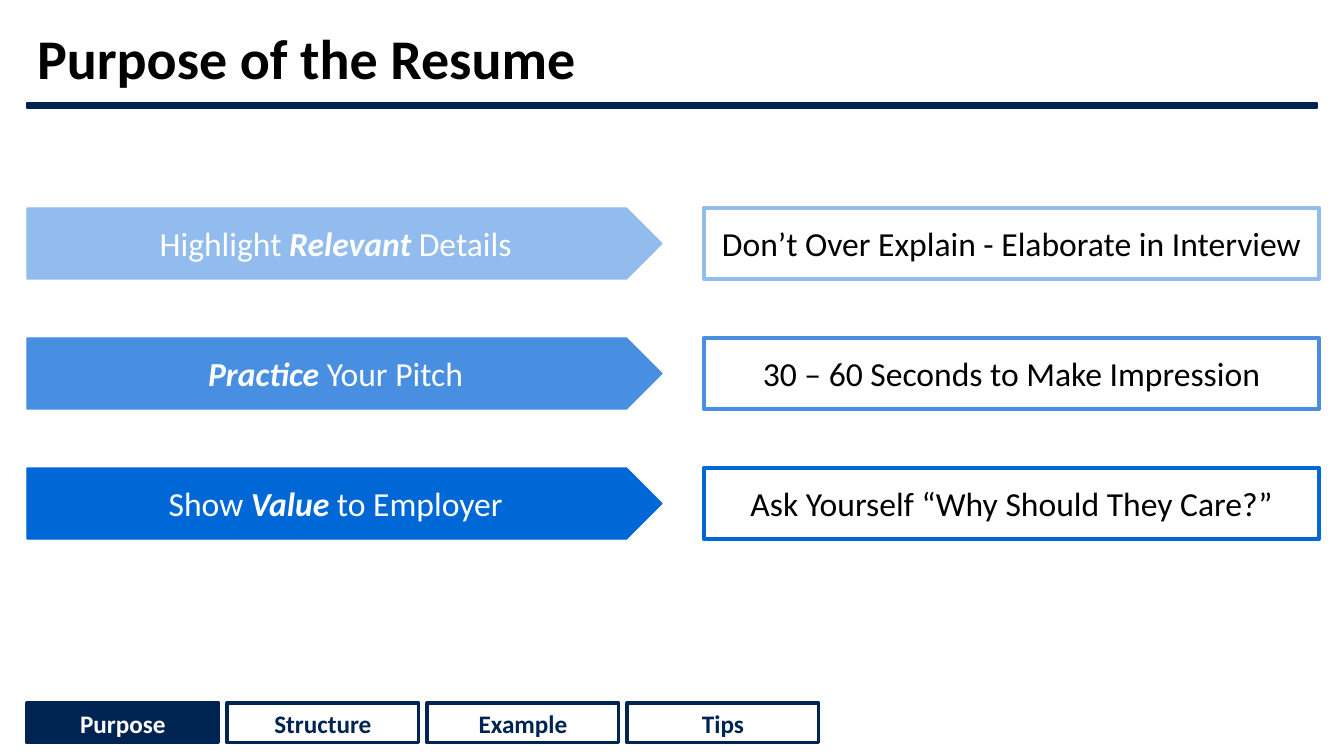
from pptx import Presentation
from pptx.dml.color import RGBColor
from pptx.enum.shapes import MSO_SHAPE as Shape
from pptx.enum.text import MSO_ANCHOR as Anchor, PP_ALIGN as Align
from pptx.util import Pt

COLORS = {
    "navy": "002452", "light": "91BCED", "medium": "488EE1",
    "strong": "0068D6", "white": "FFFFFF", "black": "000000",
}
TITLE = "Purpose of the Resume"
# Colour, arrow text as (words, emphasized) runs, box text
PURPOSES = [
    ("light", [("Highlight ", False), ("Relevant", True), (" Details", False)],
     "Don’t Over Explain - Elaborate in Interview"),
    ("medium", [("Practice", True), (" Your Pitch", False)],
     "30 – 60 Seconds to Make Impression"),
    ("strong", [("Show ", False), ("Value", True), (" to Employer", False)],
     "Ask Yourself “Why Should They Care?”"),
]
TABS = ["Purpose", "Structure", "Example", "Tips"]
CURRENT_TAB = "Purpose"

PX = 914400 / 100.8
SLIDE_WIDTH, SLIDE_HEIGHT = 1344, 756
LEFT, CONTENT_WIDTH = 27, 1290
TITLE_TOP, TITLE_HEIGHT, RULE_HEIGHT = 19, 84, 5
ROW_TOP, ROW_STEP, ROW_HEIGHT = 208, 130, 71
ARROW_WIDTH, BOX_LEFT, BOX_WIDTH = 635, 704, 615
TAB_TOP, TAB_STEP, TAB_WIDTH, TAB_HEIGHT = 703, 200, 192, 40


def px(length):
    return round(length * PX)


def rgb(name):
    return RGBColor.from_string(COLORS[name])


def format_font(font, color, **values):
    font.name = "Calibri"
    font.color.rgb = rgb(color)
    for name, value in values.items():
        setattr(font, name, value)


def add_panel(kind, area, fill, line, line_width, runs=(), color="black", **font):
    """Add a filled, outlined shape with centred (words, font values) runs."""
    shape = slide.shapes.add_shape(kind, *map(px, area))
    shape.shadow.inherit = False
    shape.fill.solid()
    shape.fill.fore_color.rgb = rgb(fill)
    shape.line.color.rgb = rgb(line)
    shape.line.width = Pt(line_width)
    shape.text_frame.vertical_anchor = Anchor.MIDDLE
    paragraph = shape.text_frame.paragraphs[0]
    paragraph.alignment = Align.CENTER
    for words, values in runs:
        run = paragraph.add_run()
        run.text = words
        format_font(run.font, color, **font, **values)


presentation = Presentation()
presentation.slide_width = px(SLIDE_WIDTH)
presentation.slide_height = px(SLIDE_HEIGHT)
slide = presentation.slides.add_slide(presentation.slide_layouts[5])

title = slide.shapes.title
title.left, title.top = px(LEFT), px(TITLE_TOP)
title.width, title.height = px(CONTENT_WIDTH), px(TITLE_HEIGHT)
title.text_frame.text = TITLE
title.text_frame.vertical_anchor = Anchor.MIDDLE
heading = title.text_frame.paragraphs[0]
heading.alignment = Align.LEFT
heading.line_spacing = 0.9
format_font(heading.runs[0].font, "black", size=Pt(40), bold=True)

add_panel(Shape.RECTANGLE, (LEFT, TITLE_TOP + TITLE_HEIGHT, CONTENT_WIDTH, RULE_HEIGHT),
          "navy", "navy", 1)

for row, (color, arrow_runs, box_text) in enumerate(PURPOSES):
    top = ROW_TOP + row * ROW_STEP
    add_panel(Shape.RECTANGLE, (BOX_LEFT, top, BOX_WIDTH, ROW_HEIGHT),
              "white", color, 3, [(box_text, {})], size=Pt(24))
    runs = [(words, {"bold": strong, "italic": strong}) for words, strong in arrow_runs]
    add_panel(Shape.PENTAGON, (LEFT, top, ARROW_WIDTH, ROW_HEIGHT),
              color, color, 1, runs, "white", size=Pt(24))

for column, label in enumerate(TABS):
    fill, color = ("navy", "white") if label == CURRENT_TAB else ("white", "navy")
    add_panel(Shape.RECTANGLE, (LEFT + column * TAB_STEP, TAB_TOP, TAB_WIDTH, TAB_HEIGHT),
              fill, "navy", 2.25, [(label, {})], color, size=Pt(18), bold=True)

presentation.save("out.pptx")
